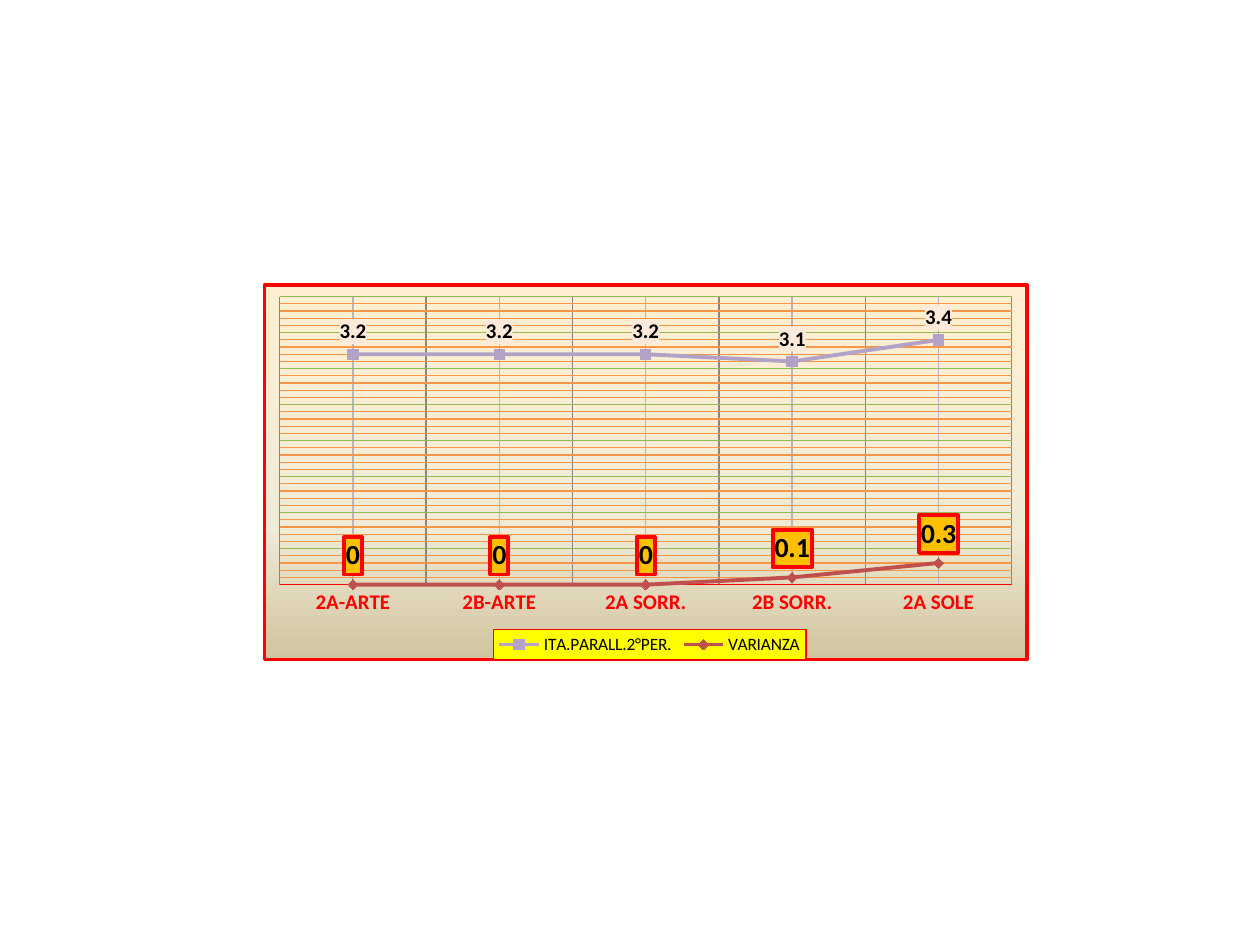
import pptx
import pptx.util
import pptx.chart.data
import pptx.dml.color
import pptx.enum.chart
import pptx.oxml
import pptx.oxml.ns

Pt = pptx.util.Pt
qn = pptx.oxml.ns.qn
NAMESPACES = pptx.oxml.ns.nsdecls("c", "a")

COLORS = {
    "text": "000000", "red": "FF0000", "lilac": "B3A2C7", "brick": "C0504D",
    "major": "98B955", "minor": "F79646", "category": "868686", "center": "B7B7B7",
    "peach": "FDEADA", "amber": "FFC000", "yellow": "FFFF00",
}
BACKDROP = [(0, "FFEFD1"), (65, "F0EBD5"), (100, "D1C39F")]


class SlideBuilder:
    def __init__(self, slide, font_name):
        self.slide = slide
        self.font_name = font_name

    def color(self, name):
        return pptx.dml.color.RGBColor.from_string(COLORS[name])

    def font(self, font, size, color="text", bold=False):
        font.name = self.font_name
        font.size = Pt(size)
        font.bold = bold
        font.color.rgb = self.color(color)

    def line(self, line, color, width):
        line.color.rgb = self.color(color)
        line.width = Pt(width)

    def solid(self, color):
        return f'<a:solidFill><a:srgbClr val="{COLORS[color]}"/></a:solidFill>'

    def gradient(self, stops):
        marks = "".join(f'<a:gs pos="{pos * 1000}"><a:srgbClr val="{rgb}"/></a:gs>'
                        for pos, rgb in stops)
        return f'<a:gradFill><a:gsLst>{marks}</a:gsLst><a:lin ang="5400000" scaled="0"/></a:gradFill>'

    def frame(self, fill="", border=None, width=0):
        outline = f'<a:ln w="{int(Pt(width))}">{self.solid(border)}</a:ln>' if border else ""
        return pptx.oxml.parse_xml(f"<c:spPr {NAMESPACES}>{fill}{outline}</c:spPr>")

    def box(self, element, fill, border=None, width=0):
        element.find(qn("c:txPr")).addprevious(self.frame(fill, border, width))

    def layout(self, element, index, x, y, w, h, inner=False):
        for old in element.findall(qn("c:layout")):
            element.remove(old)
        target = '<c:layoutTarget val="inner"/>' if inner else ""
        element.insert(index, pptx.oxml.parse_xml(
            f'<c:layout {NAMESPACES}><c:manualLayout>{target}'
            '<c:xMode val="edge"/><c:yMode val="edge"/>'
            f'<c:x val="{x}"/><c:y val="{y}"/><c:w val="{w}"/><c:h val="{h}"/>'
            '</c:manualLayout></c:layout>'))

    def line_chart(self, left, top, width, height, categories, scores):
        data = pptx.chart.data.CategoryChartData()
        data.categories = categories
        for name, values in scores:
            data.add_series(name, values)
        chart = self.slide.shapes.add_chart(
            pptx.enum.chart.XL_CHART_TYPE.LINE_MARKERS,
            Pt(left), Pt(top), Pt(width), Pt(height), data).chart
        chart.has_title = False
        self.font(chart.font, 10)
        self.box(chart.element, self.gradient(BACKDROP), "red", 2.25)
        chart.plots[0].vary_by_categories = False
        plot_area = chart.element.find(qn("c:chart")).find(qn("c:plotArea"))
        self.layout(plot_area, 0, 0.02, 0.03, 0.96, 0.77, inner=True)
        return chart

    def gridlines(self, axis, major, minor):
        axis.has_major_gridlines = axis.has_minor_gridlines = True
        self.line(axis.major_gridlines.format.line, major, 0.75)
        minor_lines = axis._element.find(qn("c:minorGridlines"))
        minor_lines.append(self.frame(border=minor, width=0.75))

    def axes(self, chart):
        values = chart.value_axis
        values.minimum_scale, values.maximum_scale = 0, 4
        values.major_unit, values.minor_unit = 0.5, 0.1
        values.visible = False
        self.gridlines(values, "major", "minor")
        classes = chart.category_axis
        classes.major_tick_mark = pptx.enum.chart.XL_TICK_MARK.NONE
        self.gridlines(classes, "category", "center")
        self.line(classes.format.line, "red", 0.75)
        self.font(classes.tick_labels.font, 12, "red", True)

    def legend(self, chart):
        chart.has_legend = True
        legend = chart.legend
        legend.position = pptx.enum.chart.XL_LEGEND_POSITION.BOTTOM
        legend.include_in_layout = False
        self.font(legend.font, 10)
        self.box(legend._element, self.solid("yellow"), "red", 0.75)
        self.layout(legend._element, 1, 0.3, 0.92, 0.41, 0.08)

    def series(self, series, color, marker, label_size, fill, border=None):
        series.smooth = False
        self.line(series.format.line, color, 2.25)
        series.marker.style = marker
        series.marker.size = 6
        series.marker.format.fill.solid()
        series.marker.format.fill.fore_color.rgb = self.color(color)
        self.line(series.marker.format.line, color, 0.75)
        labels = series.data_labels
        labels.show_value = True
        labels.position = pptx.enum.chart.XL_LABEL_POSITION.ABOVE
        self.font(labels.font, label_size, bold=True)
        self.box(labels._element, self.solid(fill), border, 2.25)


def main():
    deck = pptx.Presentation()
    deck.slide_width, deck.slide_height = Pt(720), Pt(540)
    builder = SlideBuilder(deck.slides.add_slide(deck.slide_layouts[6]), "Calibri")
    chart = builder.line_chart(
        150, 162, 438, 216,
        ["2A-ARTE", "2B-ARTE", "2A SORR.", "2B SORR.", "2A SOLE"],
        [("ITA.PARALL.2°PER.", [3.2, 3.2, 3.2, 3.1, 3.4]),
         ("VARIANZA", [0, 0, 0, 0.1, 0.3])])
    builder.axes(chart)
    builder.legend(chart)
    results, variance = chart.plots[0].series
    markers = pptx.enum.chart.XL_MARKER_STYLE
    builder.series(results, "lilac", markers.SQUARE, 12, "peach")
    builder.series(variance, "brick", markers.DIAMOND, 16, "amber", "red")
    deck.save("out.pptx")


if __name__ == "__main__":
    main()
